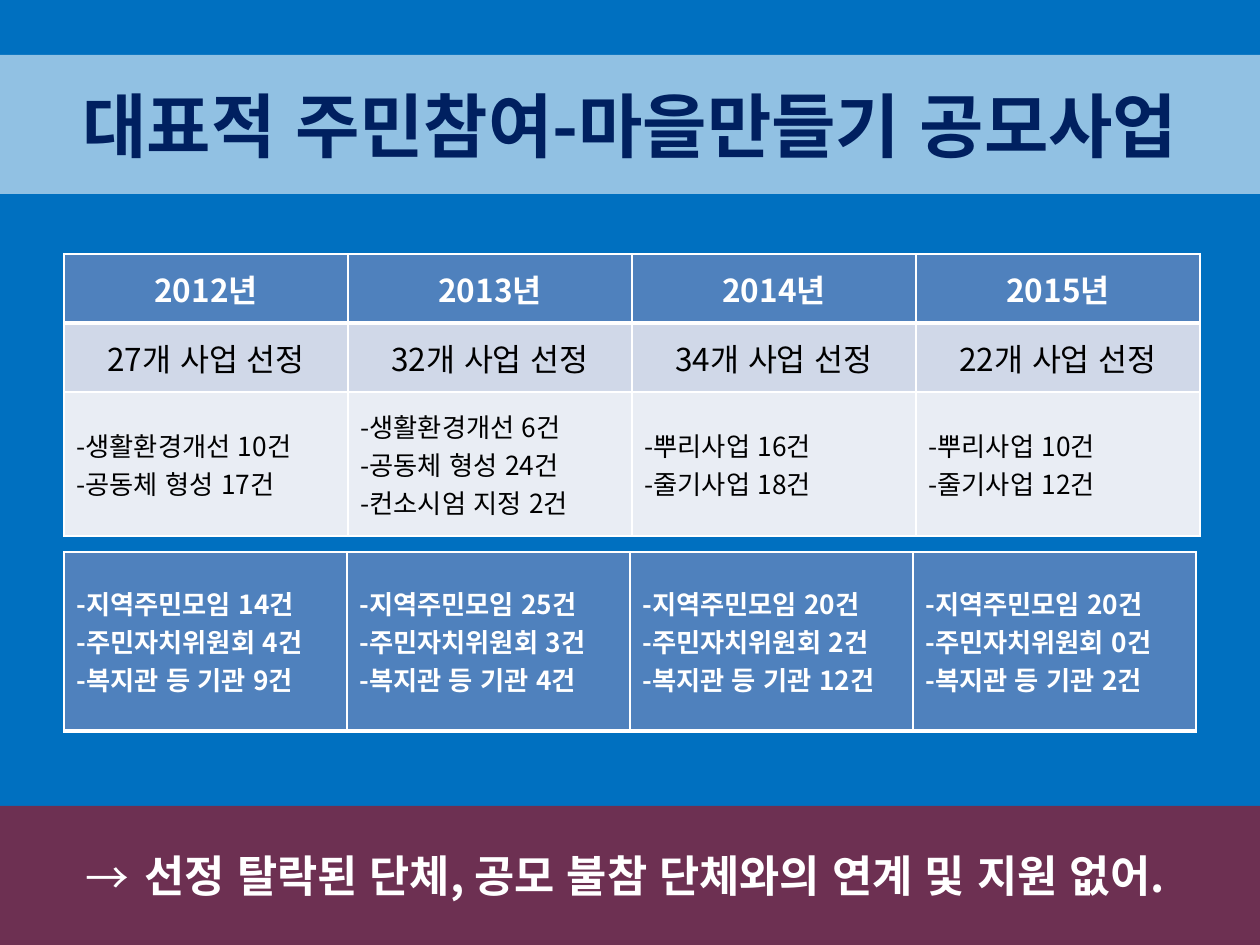
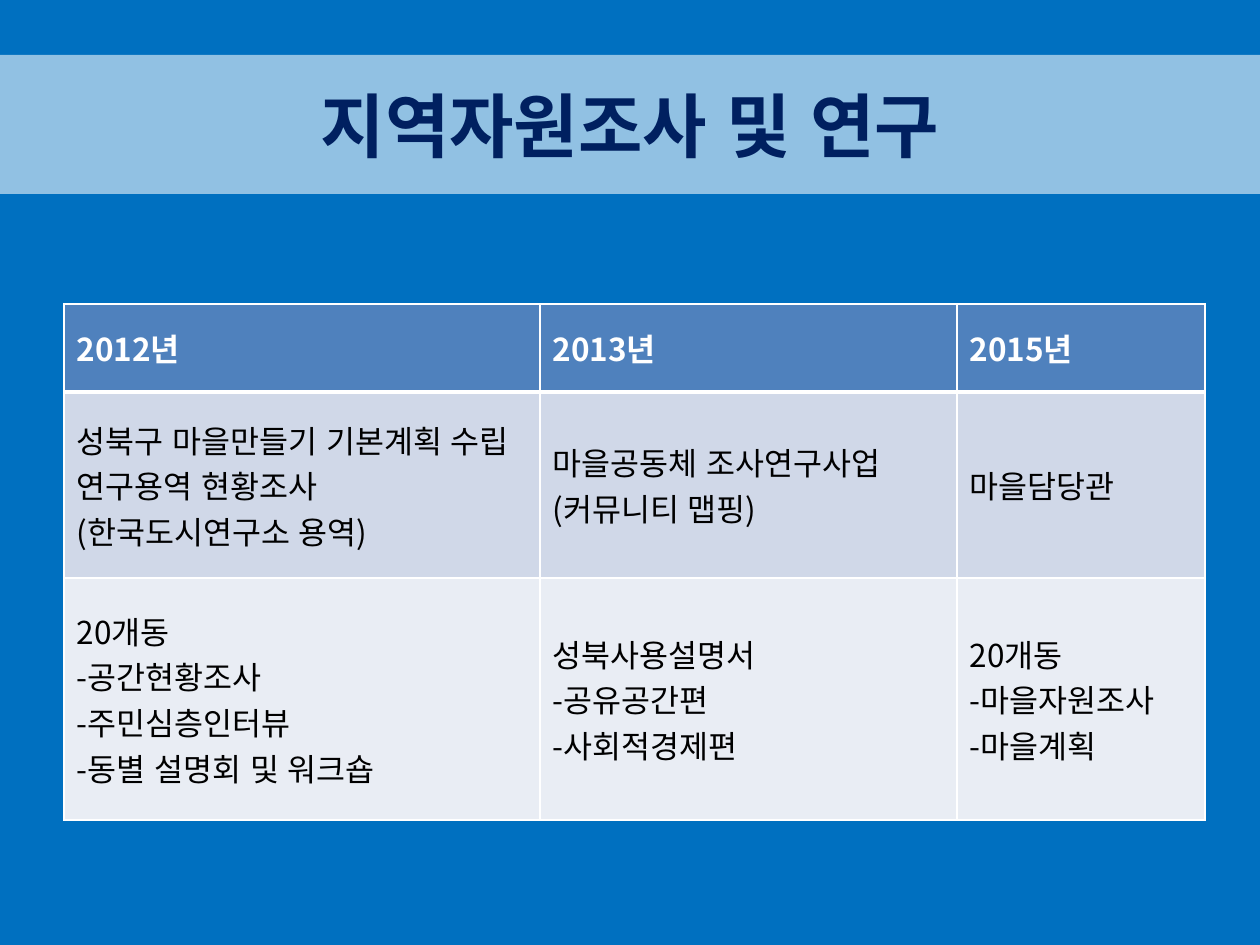
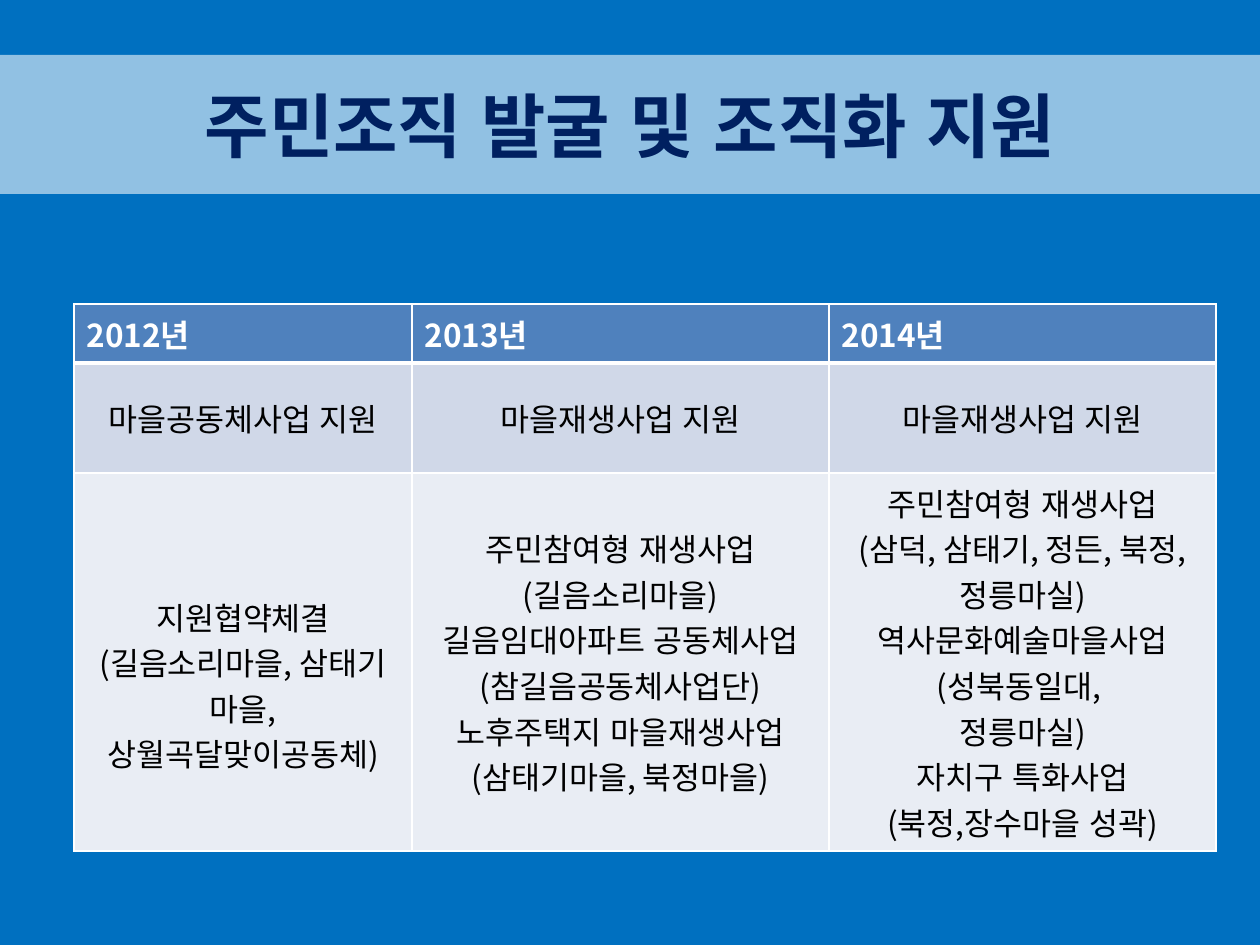
"""Builds three slides on community programmes: bands and tables by year."""
from pptx import Presentation
from pptx.dml.color import RGBColor
from pptx.enum.lang import MSO_LANGUAGE_ID
from pptx.enum.shapes import MSO_SHAPE
from pptx.enum.text import MSO_ANCHOR, PP_ALIGN
from pptx.oxml.ns import qn
from pptx.util import Emu, Pt
from lxml import etree

RECTANGLE = MSO_SHAPE.RECTANGLE
MIDDLE = MSO_ANCHOR.MIDDLE
LEFT = PP_ALIGN.LEFT
CENTER = PP_ALIGN.CENTER
KOREAN = MSO_LANGUAGE_ID.KOREAN

FONT = "Noto Sans CJK KR"
BLUE = RGBColor(0x00, 0x70, 0xC0)
NAVY = RGBColor(0x00, 0x20, 0x60)
RED = RGBColor(0xC0, 0x00, 0x00)
WHITE = RGBColor(0xFF, 0xFF, 0xFF)
BLACK = RGBColor(0x00, 0x00, 0x00)
HEADER_BLUE = RGBColor(0x4F, 0x81, 0xBD)
ROW_FILLS = [HEADER_BLUE, RGBColor(0xD0, 0xD8, 0xE8), RGBColor(0xE9, 0xED, 0xF4)]

WIDTH, HEIGHT = 1260, 945
BAND_HEIGHT = 139
BAND_OPACITY = 57
THIN, HEAVY = Pt(1), Pt(3)


def px(length):
    return Emu(round(length * 914400 / 126))


def add_child(parent, tag, **attributes):
    child = etree.SubElement(parent, qn(tag))
    for name, value in attributes.items():
        child.set(name, str(value))
    return child


def write(text_frame, text, size=18, color=BLACK, bold=False, align=LEFT):
    text_frame.word_wrap = True
    for index, line in enumerate(text.split("\n")):
        paragraph = text_frame.paragraphs[0] if index == 0 else text_frame.add_paragraph()
        paragraph.alignment = align
        run = paragraph.add_run()
        run.text = line
        font = run.font
        font.name, font.size, font.bold = FONT, Pt(size), bold
        font.color.rgb = color
        font.language_id = KOREAN
        add_child(font._element, "a:ea", typeface=FONT)


def add_bullet(paragraph, character, indent):
    properties = paragraph._p.get_or_add_pPr()
    properties.set("marL", str(px(indent)))
    properties.set("indent", str(-px(indent)))
    add_child(properties, "a:buFont", typeface=FONT)
    add_child(properties, "a:buChar", char=character)


def add_borders(cell, top, bottom):
    properties = cell._tc.get_or_add_tcPr()
    sides = {"a:lnL": THIN, "a:lnR": THIN, "a:lnT": top, "a:lnB": bottom}
    for tag, width in sides.items():
        fill = add_child(add_child(properties, tag, w=width), "a:solidFill")
        add_child(fill, "a:srgbClr", val=WHITE)


class Deck:
    """Holds the presentation, its style and the current slide."""

    def __init__(self):
        self.presentation = Presentation()
        self.presentation.slide_width = px(WIDTH)
        self.presentation.slide_height = px(HEIGHT)
        self.slide = None

    def add_slide(self, title):
        self.slide = self.presentation.slides.add_slide(self.presentation.slide_layouts[6])
        background = self.slide.background.fill
        background.solid()
        background.fore_color.rgb = BLUE
        self.band(55, WHITE, title, size=40, color=NAVY)

    def band(self, top, fill_color, text, **text_format):
        shape = self.slide.shapes.add_shape(
            RECTANGLE, 0, px(top), px(WIDTH), px(BAND_HEIGHT))
        shape.shadow.inherit = False
        shape.line.fill.background()
        shape.fill.solid()
        shape.fill.fore_color.rgb = fill_color
        color = shape._element.spPr.find(qn("a:solidFill"))[0]
        add_child(color, "a:alpha", val=BAND_OPACITY * 1000)
        shape.text_frame.vertical_anchor = MIDDLE
        write(shape.text_frame, text, bold=True, align=CENTER, **text_format)
        return shape

    def table(self, left, top, columns, rows, texts, aligns, sizes=(18, 18, 18)):
        table = self.slide.shapes.add_table(
            len(rows), len(columns), px(left), px(top),
            px(sum(columns)), px(sum(rows))).table
        table.horz_banding = False
        for column, width in zip(table.columns, columns):
            column.width = px(width)
        for index, height in enumerate(rows):
            table.rows[index].height = px(height)
            header = index == 0
            for cell, text in zip(table.rows[index].cells, texts[index]):
                add_borders(cell, HEAVY if index == 1 else THIN, HEAVY if header else THIN)
                cell.fill.solid()
                cell.fill.fore_color.rgb = ROW_FILLS[index]
                cell.vertical_anchor = MIDDLE
                write(cell.text_frame, text, size=sizes[index], bold=header,
                      color=WHITE if header else BLACK, align=aligns[index])
        return table


def contest_slide(deck):
    deck.add_slide("대표적 주민참여-마을만들기 공모사업")
    projects = [
        ["2012년", "2013년", "2014년", "2015년"],
        [f"{count}개 사업 선정" for count in (27, 32, 34, 22)],
        ["-생활환경개선 10건\n-공동체 형성 17건",
         "-생활환경개선 6건\n-공동체 형성 24건\n-컨소시엄 지정 2건",
         "-뿌리사업 16건\n-줄기사업 18건",
         "-뿌리사업 10건\n-줄기사업 12건"],
    ]
    deck.table(64, 254, [284] * 4, [69, 69, 144], projects,
               aligns=(CENTER, CENTER, LEFT), sizes=(18, 18, 15))
    group_counts = [(14, 4, 9), (25, 3, 4), (20, 2, 12), (20, 0, 2)]
    groups = [f"-지역주민모임 {residents}건\n-주민자치위원회 {committees}건\n"
              f"-복지관 등 기관 {agencies}건"
              for residents, committees, agencies in group_counts]
    deck.table(64, 552, [283] * 4, [179], [groups], aligns=(LEFT,), sizes=(15,))
    conclusion = deck.band(HEIGHT - BAND_HEIGHT, RED,
                           " 선정 탈락된 단체, 공모 불참 단체와의 연계 및 지원 없어. ",
                           size=25, color=WHITE)
    add_bullet(conclusion.text_frame.paragraphs[0], "→", 47)


def research_slide(deck):
    deck.add_slide("지역자원조사 및 연구")
    studies = [
        ["2012년", "2013년", "2015년"],
        ["성북구 마을만들기 기본계획 수립 연구용역 현황조사\n(한국도시연구소 용역)",
         "마을공동체 조사연구사업(커뮤니티 맵핑)",
         "마을담당관"],
        ["20개동\n-공간현황조사\n-주민심층인터뷰\n-동별 설명회 및 워크숍",
         "성북사용설명서\n-공유공간편\n-사회적경제편",
         "20개동\n-마을자원조사\n-마을계획"],
    ]
    deck.table(64, 304, [476, 417, 248], [88, 186, 242], studies,
               aligns=(LEFT, LEFT, LEFT))


def support_slide(deck):
    deck.add_slide("주민조직 발굴 및 조직화 지원")
    programmes = [
        ["2012년", "2013년", "2014년"],
        ["마을공동체사업 지원", "마을재생사업 지원", "마을재생사업 지원"],
        ["지원협약체결(길음소리마을, 삼태기 마을, 상월곡달맞이공동체)",
         "주민참여형 재생사업\n(길음소리마을)\n길음임대아파트 공동체사업\n"
         "(참길음공동체사업단)\n노후주택지 마을재생사업\n(삼태기마을, 북정마을)",
         "주민참여형 재생사업\n(삼덕, 삼태기, 정든, 북정, 정릉마실)\n"
         "역사문화예술마을사업\n(성북동일대, \n정릉마실)\n"
         "자치구 특화사업\n(북정,장수마을 성곽)"],
    ]
    table = deck.table(74, 304, [338, 417, 387], [59, 110, 378], programmes,
                       aligns=(LEFT, CENTER, CENTER))
    table.cell(2, 0).margin_top = px(52)


def main():
    deck = Deck()
    contest_slide(deck)
    research_slide(deck)
    support_slide(deck)
    deck.presentation.save("out.pptx")


if __name__ == "__main__":
    main()
